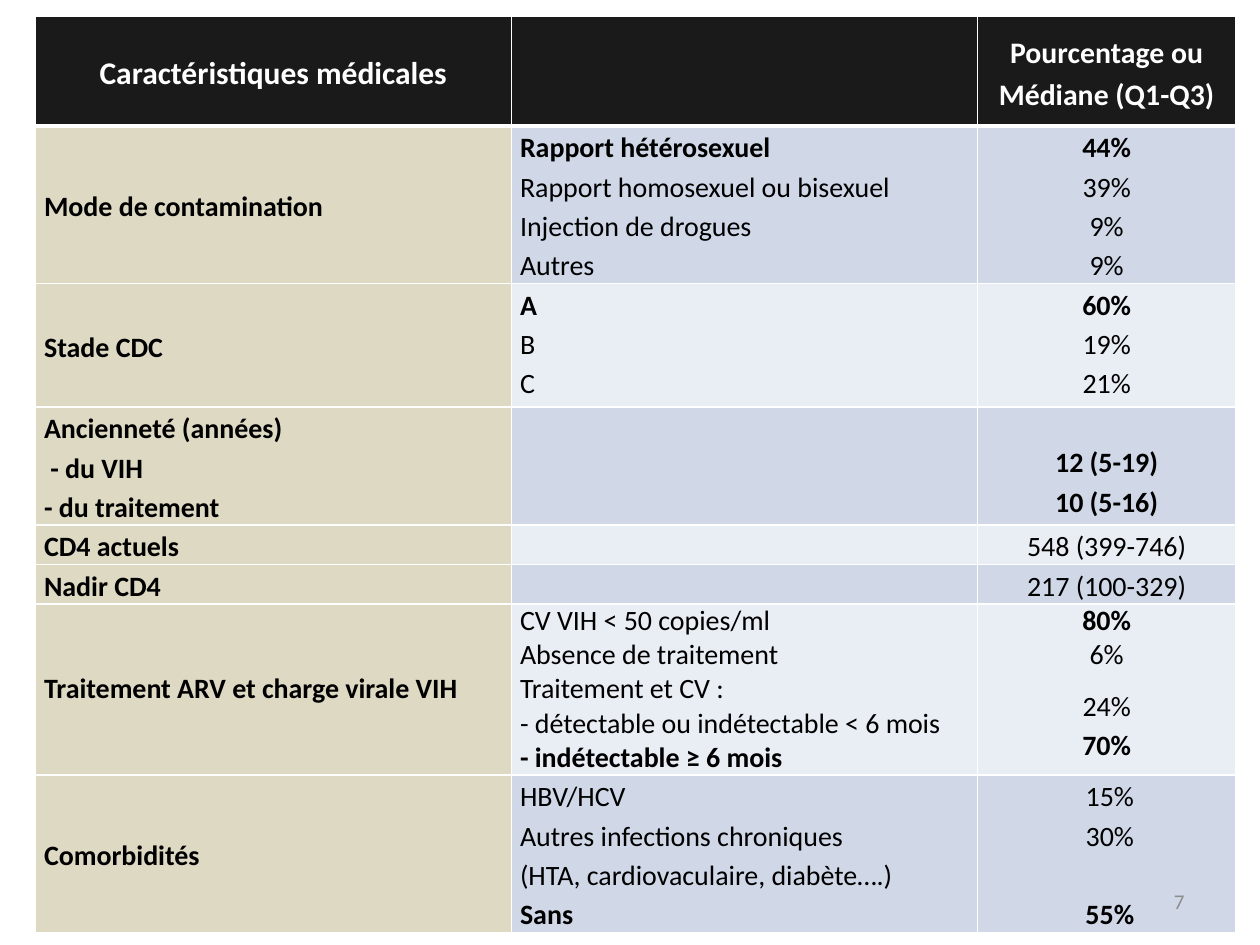
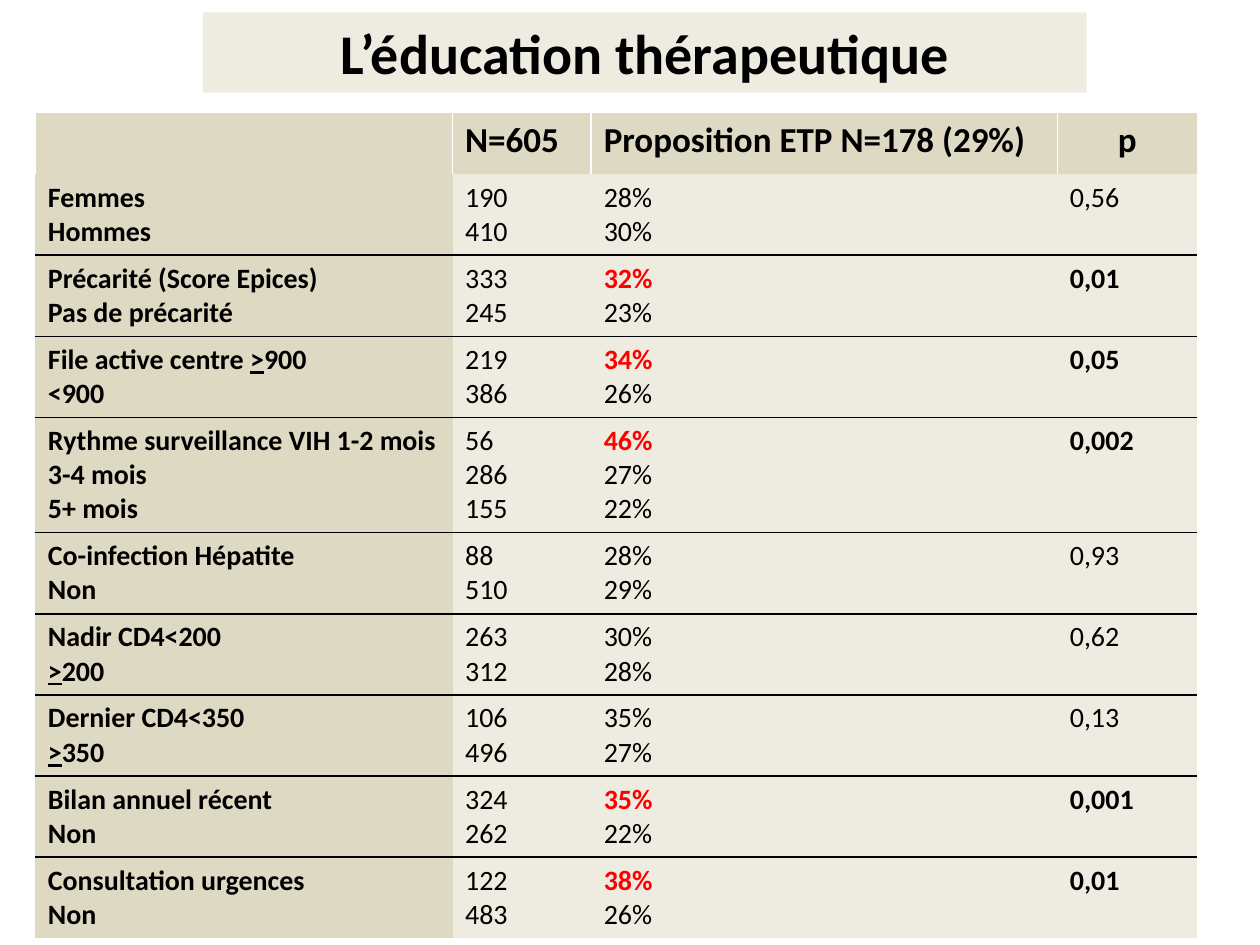
from dataclasses import dataclass

from lxml import etree
from pptx import Presentation
from pptx.dml.color import RGBColor
from pptx.enum.text import MSO_ANCHOR, MSO_AUTO_SIZE, PP_ALIGN
from pptx.oxml.ns import qn
from pptx.util import Pt

LEFT, CENTER, RIGHT = PP_ALIGN.LEFT, PP_ALIGN.CENTER, PP_ALIGN.RIGHT
TOP, MIDDLE = MSO_ANCHOR.TOP, MSO_ANCHOR.MIDDLE
NO_AUTOFIT = MSO_AUTO_SIZE.NONE
PLAIN_TABLE_STYLE = "{2D5ABB26-0587-4C30-8999-92F81FD0307C}"
TITLE_ONLY_LAYOUT, BLANK_LAYOUT = 5, 6


@dataclass(frozen=True)
class Theme:
    """Colours, font and type sizes shared by the slides."""

    font: str = "Calibri"
    black: str = "000000"
    white: str = "FFFFFF"
    red: str = "FF0000"
    grey: str = "8C8C8C"
    header: str = "1A1A1A"
    sand: str = "DDD9C3"
    pale_sand: str = "EEECE1"
    bands: tuple = ("D0D8E8", "E9EDF4")
    title_size: float = 32
    heading_size: float = 20
    label_heading_size: float = 18
    value_heading_size: float = 17
    body_size: float = 16
    number_size: float = 12


THEME = Theme()


@dataclass
class Line:
    """One paragraph; text between underscores is underlined."""

    text: str
    bold: bool = False
    colour: str = THEME.black
    size: float = THEME.body_size
    spacing: float = 0
    before: float = 0


@dataclass
class MedicalRow:
    """One group of medical characteristics."""

    height: float
    labels: list
    details: list
    values: list
    spacing: float = 1.15
    values_top: float = 0


def strong(text, **options):
    """Return a bold line."""
    return Line(text, bold=True, **options)


def alert(text):
    """Return a bold red line."""
    return strong(text, colour=THEME.red)


MEDICAL_BOX = (20.2, 9.4, 686, 523)
MEDICAL_COLUMNS = (272, 266.4, 147.6)
MEDICAL_HEADER_HEIGHT = 62.6
MEDICAL_ROWS = [
    MedicalRow(89.8, ["Mode de contamination"],
               [strong("Rapport hétérosexuel"), "Rapport homosexuel ou bisexuel",
                "Injection de drogues", "Autres"],
               [strong("44%"), "39%", "9%", "9%"]),
    MedicalRow(70.6, ["Stade CDC"], [strong("A"), "B", "C"],
               [strong("60%"), "19%", "21%"]),
    MedicalRow(67.4, ["Ancienneté (années)", " - du VIH", "- du traitement"], [],
               [strong("12 (5-19)"), strong("10 (5-16)")], values_top=19.5),
    MedicalRow(22.5, ["CD4 actuels"], [], ["548 (399-746)"]),
    MedicalRow(22.5, ["Nadir CD4"], [], ["217 (100-329)"]),
    MedicalRow(97.7, ["Traitement ARV et charge virale VIH"],
               ["CV VIH < 50 copies/ml", "Absence de traitement", "Traitement et CV :",
                "- détectable ou indétectable < 6 mois", strong("- indétectable ≥ 6 mois")],
               [strong("80%"), "6%", Line("24%", spacing=1.5), strong("70%", spacing=1.15)],
               spacing=1),
    MedicalRow(89.8, ["Comorbidités"],
               ["HBV/HCV", "Autres infections chroniques",
                "(HTA, cardiovaculaire, diabète….)", strong("Sans")],
               [" 15%", " 30%", strong(" 55%", before=22.4)]),
]

EDUCATION_BOX = (20.2, 64.3, 664, 471.5)
EDUCATION_COLUMNS = (238.4, 79.2, 266.4, 80)
EDUCATION_HEADINGS = ("", "N=605", "Proposition ETP N=178 (29%)", "p")
EDUCATION_HEADER_HEIGHT = 35.2
EDUCATION_ROWS = [
    (["Femmes", "Hommes"], ["190", "410"], ["28%", "30%"], "0,56"),
    (["Précarité (Score Epices)", "Pas de précarité"], ["333", "245"],
     [alert("32%"), "23%"], strong("0,01")),
    (["File active centre _>_900", "<900"], ["219", "386"],
     [alert("34%"), "26%"], strong("0,05")),
    (["Rythme surveillance VIH 1-2 mois", "3-4 mois", "5+ mois"], ["56", "286", "155"],
     [alert("46%"), "27%", "22%"], strong("0,002")),
    (["Co-infection Hépatite", "Non"], ["88", "510"], ["28%", "29%"], "0,93"),
    (["Nadir CD4<200", "_>_200"], ["263", "312"], ["30%", "28%"], "0,62"),
    (["Dernier CD4<350", "_>_350"], ["106", "496"], ["35%", "27%"], "0,13"),
    (["Bilan annuel récent", "Non"], ["324", "262"], [alert("35%"), "22%"], strong("0,001")),
    (["Consultation urgences", "Non"], ["122", "483"], [alert("38%"), "26%"], strong("0,01")),
]


def points(values):
    """Convert numbers to lengths in points."""
    return [Pt(value) for value in values]


def write_lines(frame, lines, align=LEFT, spacing=1):
    """Write lines, given as Line or plain text, into a text frame."""
    frame.word_wrap = True
    for index, item in enumerate(lines):
        line = item if isinstance(item, Line) else Line(item)
        paragraph = frame.paragraphs[0] if index == 0 else frame.add_paragraph()
        paragraph.alignment = align
        paragraph.line_spacing = line.spacing or spacing
        paragraph.space_before = Pt(line.before)
        font = paragraph.font
        font.name, font.size, font.bold = THEME.font, Pt(line.size), line.bold
        font.color.rgb = RGBColor.from_string(line.colour)
        for part, text in enumerate(line.text.split("_")):
            if text:
                run = paragraph.add_run()
                run.text = text
                if part % 2:
                    run.font.underline = True


def set_borders(cell, borders):
    """Draw cell borders given as side: (colour, width)."""
    properties = cell._tc.get_or_add_tcPr()
    for side in "LRTB":
        if side in borders:
            colour, width = borders[side]
            line = etree.SubElement(properties, qn(f"a:ln{side}"), w=str(Pt(width)))
            fill = etree.SubElement(line, qn("a:solidFill"))
            etree.SubElement(fill, qn("a:srgbClr"), val=colour)


def fill_cell(cell, lines, fill, borders, margins, align=LEFT, anchor=TOP, spacing=1):
    """Format one table cell and write its lines."""
    set_borders(cell, borders)
    cell.fill.solid()
    cell.fill.fore_color.rgb = RGBColor.from_string(fill)
    side, top, bottom = points(margins)
    cell.margin_left = cell.margin_right = side
    cell.margin_top, cell.margin_bottom = top, bottom
    cell.vertical_anchor = anchor
    write_lines(cell.text_frame, lines or [""], align, spacing)


def add_plain_table(slide, box, column_widths, row_heights):
    """Add an unstyled table with the given grid."""
    frame = slide.shapes.add_table(len(row_heights), len(column_widths), *points(box))
    for style in frame.element.iter(qn("a:tableStyleId")):
        style.text = PLAIN_TABLE_STYLE
    table = frame.table
    table.horz_banding = False
    for column, width in zip(table.columns, column_widths):
        column.width = Pt(width)
    for row, height in zip(table.rows, row_heights):
        row.height = Pt(height)
    return table


def add_medical_table(slide, box):
    """Add the table of medical characteristics."""
    heights = [MEDICAL_HEADER_HEIGHT] + [row.height for row in MEDICAL_ROWS]
    table = add_plain_table(slide, box, MEDICAL_COLUMNS, heights)
    grid = dict.fromkeys("LRTB", (THEME.white, 1))
    thick = (THEME.white, 3)
    headings = [
        strong("Caractéristiques médicales", colour=THEME.white, size=THEME.label_heading_size),
        "",
        strong("Pourcentage ou Médiane (Q1-Q3)", colour=THEME.white,
               size=THEME.value_heading_size),
    ]
    for column, heading in enumerate(headings):
        fill_cell(table.cell(0, column), [heading], THEME.header, {**grid, "B": thick},
                  (5, 0, 0), CENTER, MIDDLE, 1.15)
    for index, row in enumerate(MEDICAL_ROWS):
        borders = {**grid, "T": thick} if index == 0 else grid
        band = THEME.bands[index % 2]
        label, detail, value = table.rows[index + 1].cells
        fill_cell(label, [strong(text) for text in row.labels], THEME.sand, borders,
                  (5, 0, 0), anchor=MIDDLE, spacing=row.spacing)
        fill_cell(detail, row.details, band, borders, (5, 0, 0), spacing=row.spacing)
        fill_cell(value, row.values, band, borders, (5, row.values_top, 0), CENTER,
                  spacing=row.spacing)


def add_education_table(slide, box):
    """Add the table comparing proposals of therapeutic education."""
    heights = [EDUCATION_HEADER_HEIGHT]
    heights += [7.2 + 19.55 * len(row[0]) for row in EDUCATION_ROWS]
    table = add_plain_table(slide, box, EDUCATION_COLUMNS, heights)
    margins = (7.2, 3.6, 3.6)
    header_borders = dict.fromkeys("LRT", (THEME.white, 1))
    for column, text in enumerate(EDUCATION_HEADINGS):
        fill_cell(table.cell(0, column), [strong(text, size=THEME.heading_size)], THEME.sand,
                  header_borders, margins, CENTER if text == "p" else LEFT)
    rule = (THEME.black, 1)
    last = len(EDUCATION_ROWS) - 1
    for index, (labels, counts, shares, p_value) in enumerate(EDUCATION_ROWS):
        borders = {}
        if index > 0:
            borders["T"] = rule
        if index < last:
            borders["B"] = rule
        contents = ([strong(text) for text in labels], counts, shares, [p_value])
        for column, lines in enumerate(contents):
            fill = THEME.pale_sand if column else THEME.sand
            fill_cell(table.cell(index + 1, column), lines, fill, borders, margins)


def add_page_number(slide, box, number):
    """Add the page number."""
    frame = slide.shapes.add_textbox(*points(box)).text_frame
    frame.vertical_anchor = MIDDLE
    write_lines(frame, [Line(number, colour=THEME.grey, size=THEME.number_size)], RIGHT)


def add_title(slide, box, text):
    """Place the title on its pale band."""
    title = slide.shapes.title
    title.left, title.top, title.width, title.height = points(box)
    title.fill.solid()
    title.fill.fore_color.rgb = RGBColor.from_string(THEME.pale_sand)
    frame = title.text_frame
    frame.auto_size = NO_AUTOFIT
    frame.vertical_anchor = MIDDLE
    write_lines(frame, [strong(text, size=THEME.title_size)], CENTER)


def build_medical_slide(presentation):
    """Build the slide of medical characteristics."""
    slide = presentation.slides.add_slide(presentation.slide_layouts[BLANK_LAYOUT])
    add_medical_table(slide, MEDICAL_BOX)
    add_page_number(slide, (516, 500.4, 168, 28.8), "7")


def build_education_slide(presentation):
    """Build the slide on therapeutic education."""
    slide = presentation.slides.add_slide(presentation.slide_layouts[TITLE_ONLY_LAYOUT])
    add_title(slide, (116, 7, 505, 46), "L’éducation thérapeutique")
    add_education_table(slide, EDUCATION_BOX)


def main():
    """Build and save the presentation."""
    presentation = Presentation()
    presentation.slide_width, presentation.slide_height = Pt(720), Pt(540)
    build_medical_slide(presentation)
    build_education_slide(presentation)
    presentation.save("out.pptx")


if __name__ == "__main__":
    main()
